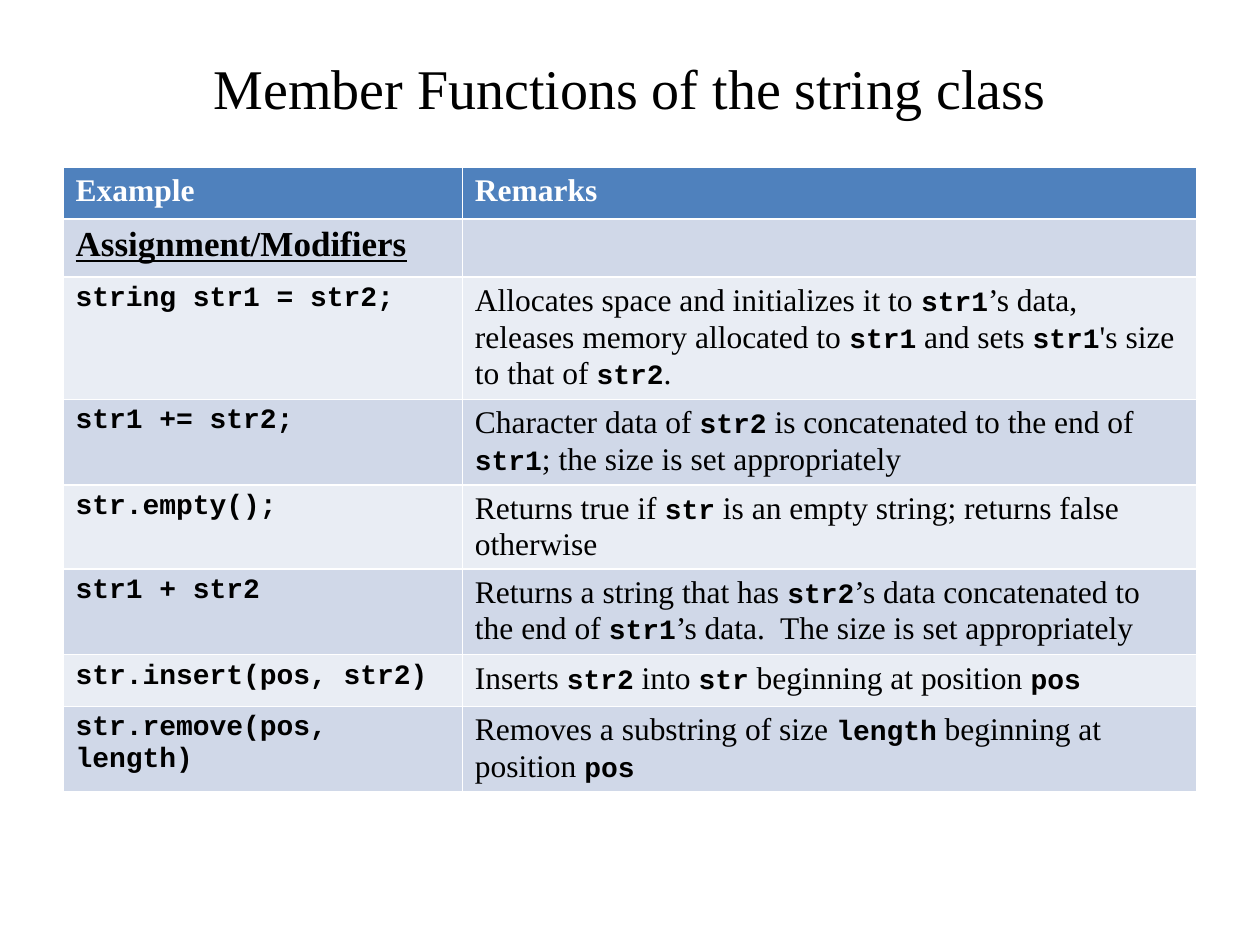
import pptx
import pptx.util
import pptx.dml.color
import pptx.enum.text

Inches = pptx.util.Inches
Pt = pptx.util.Pt

COLORS = {
    "text": "000000",
    "header_text": "FFFFFF",
    "header": "4F81BD",
    "dark_band": "D0D8E8",
    "light_band": "E9EDF4",
}
SERIF = "Times New Roman"
MONO = "Courier New"
TITLE = "Member Functions of the string class"
HEADINGS = ("Example", "Remarks")
SECTION = "Assignment/Modifiers"
FUNCTIONS = [
    ("string str1 = str2;",
     "Allocates space and initializes it to `str1`’s data, releases memory "
     "allocated to `str1` and sets `str1`'s size to that of `str2`."),
    ("str1 += str2;",
     "Character data of `str2` is concatenated to the end of `str1`; "
     "the size is set appropriately"),
    ("str.empty();",
     "Returns true if `str` is an empty string; returns false otherwise"),
    ("str1 + str2",
     "Returns a string that has `str2`’s data concatenated to the end of "
     "`str1`’s data.  The size is set appropriately"),
    ("str.insert(pos, str2)",
     "Inserts `str2` into `str` beginning at position `pos`"),
    ("str.remove(pos, length)",
     "Removes a substring of size `length` beginning at position `pos`"),
]


def rgb(name):
    return pptx.dml.color.RGBColor.from_string(COLORS[name])


def style(font, size, face=SERIF, bold=False, color="text"):
    font.size = Pt(size)
    font.name = face
    font.bold = bold
    font.color.rgb = rgb(color)


def write_line(cell, text, size, **look):
    line = cell.text_frame.paragraphs[0]
    line.add_run().text = text
    style(line.font, size, **look)
    return line


def write_remark(cell, remark):
    line = cell.text_frame.paragraphs[0]
    for index, part in enumerate(remark.split("`")):
        if not part:
            continue
        run = line.add_run()
        run.text = part
        if index % 2:
            style(run.font, 16, MONO, bold=True)
        else:
            style(run.font, 18)


def place_title(slide, left, top, width, height):
    title = slide.shapes.title
    title.left, title.top, title.width, title.height = left, top, width, height
    title.text_frame.text = TITLE
    title.text_frame.vertical_anchor = pptx.enum.text.MSO_ANCHOR.MIDDLE
    heading = title.text_frame.paragraphs[0]
    heading.alignment = pptx.enum.text.PP_ALIGN.CENTER
    style(heading.font, 32)


def place_functions(slide, left, top, width, row_height):
    row_count = len(FUNCTIONS) + 2
    table = slide.shapes.add_table(
        row_count, 2, left, top, width, row_height * row_count).table
    table.columns[0].width = Inches(3.17)
    table.columns[1].width = width - Inches(3.17)
    table.rows[1].height = Inches(0.46)

    for index, row in enumerate(table.rows):
        band = "header" if index == 0 else ("light_band", "dark_band")[index % 2]
        for cell in row.cells:
            cell.fill.solid()
            cell.fill.fore_color.rgb = rgb(band)

    for column, heading in enumerate(HEADINGS):
        write_line(table.cell(0, column), heading, 18, bold=True, color="header_text")
    section = write_line(table.cell(1, 0), SECTION, 20, bold=True)
    section.font.underline = True
    for index, (example, remark) in enumerate(FUNCTIONS, start=2):
        write_line(table.cell(index, 0), example, 16, face=MONO, bold=True)
        write_remark(table.cell(index, 1), remark)


def main():
    deck = pptx.Presentation()
    deck.slide_width, deck.slide_height = Inches(10), Inches(7.5)
    slide = deck.slides.add_slide(deck.slide_layouts[5])
    place_title(slide, Inches(0.5), Inches(0.3), Inches(9), Inches(0.78))
    place_functions(slide, Inches(0.5), Inches(1.33), Inches(9), Inches(0.41))
    deck.save("out.pptx")


if __name__ == "__main__":
    main()
